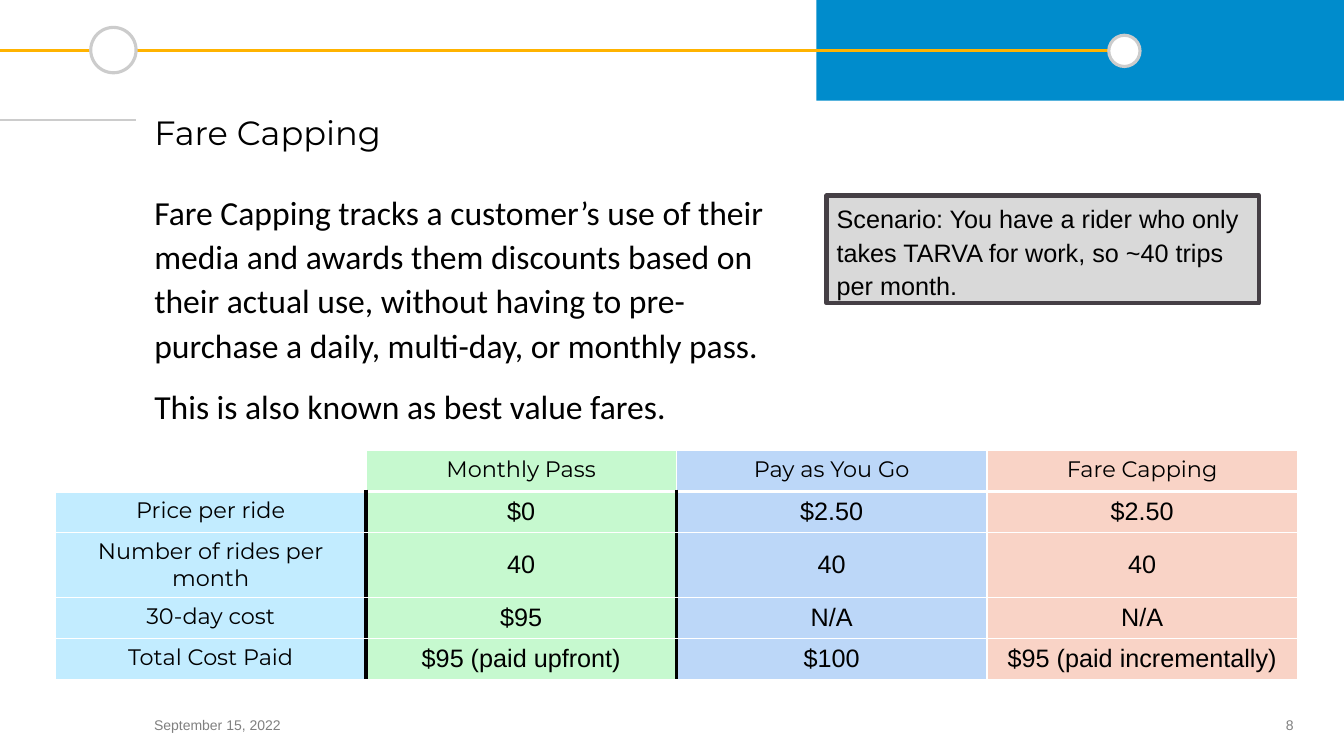
import dataclasses

import lxml.etree
import pptx
import pptx.dml.color
import pptx.enum.shapes
import pptx.enum.text
import pptx.oxml.ns
import pptx.util

Pt = pptx.util.Pt
qn = pptx.oxml.ns.qn
Align = pptx.enum.text.PP_ALIGN
Anchor = pptx.enum.text.MSO_ANCHOR
Kind = pptx.enum.shapes.MSO_SHAPE

HUES = {
    "white": "FFFFFF", "black": "000000", "blue": "008CCC", "gold": "FFB300",
    "silver": "CCCCCC", "gray": "808080", "pale": "D9D9D9", "dark": "453F45",
    "sky": "C2ECFF", "mint": "C6F9CF", "ice": "BCD7F8", "peach": "F9D3C6",
}


@dataclasses.dataclass
class Box:
    left: float
    top: float
    width: float
    height: float

    def spots(self) -> list:
        return [Pt(v) for v in (self.left, self.top, self.width, self.height)]


@dataclasses.dataclass
class Style:
    font: str
    size: float
    hue: str = "black"
    align: Align = Align.LEFT
    lead: float = 1.0
    gap: float = 0


@dataclasses.dataclass
class Rule:
    start: float
    end: float
    top: float
    hue: str
    width: float


@dataclasses.dataclass
class Form:
    kind: Kind
    box: Box
    fill: str
    line: str = ""


@dataclasses.dataclass
class Field:
    index: int
    box: Box
    style: Style
    texts: list
    anchor: Anchor = Anchor.TOP


@dataclasses.dataclass
class Note:
    box: Box
    text: str
    align: Align


RULES = [
    Rule(0, 792, 36, "gold", 2.25),
    Rule(0, 97.2, 85.7, "silver", 1.5),
]
PANEL = Form(Kind.RECTANGLE, Box(583.2, 0, 376.8, 72), "blue")
DOTS = [
    Form(Kind.OVAL, Box(792, 25.2, 22.3, 22.3), "white", "silver"),
    Form(Kind.OVAL, Box(64.8, 19.6, 32.4, 32.4), "white", "silver"),
]
FIELDS = [
    Field(0, Box(103, 72, 711.4, 48.2), Style("Montserrat", 24, lead=0.9),
          ["Fare Capping"], Anchor.MIDDLE),
    Field(1, Box(103, 130.3, 452.2, 339.8), Style("Calibri", 24, lead=1.1, gap=12),
          ["Fare Capping tracks a customer’s use of their media and awards them "
           "discounts based on their actual use, without having to pre-purchase "
           "a daily, multi-day, or monthly pass.",
           "This is also known as best value fares."]),
    Field(2, Box(590.4, 139.7, 308.9, 77), Style("Arial", 18, lead=1.1),
          ["Scenario: You have a rider who only takes TARVA for work, "
           "so ~40 trips per month."]),
]
NOTES = [
    Note(Box(103, 503.3, 131, 28.8), "September 15, 2022", Align.LEFT),
    Note(Box(905, 503.3, 32.4, 28.8), "8", Align.CENTER),
]
SMALL = Style("Arial", 10, "gray")
LABEL = Style("Montserrat", 16, align=Align.CENTER)
VALUE = Style("Arial", 18, align=Align.CENTER)
FARES = [
    ["", "Monthly Pass", "Pay as You Go", "Fare Capping"],
    ["Price per ride", "$0", "$2.50", "$2.50"],
    ["Number of rides per month", "40", "40", "40"],
    ["30-day cost", "$95", "N/A", "N/A"],
    ["Total Cost Paid", "$95 (paid upfront)", "$100", "$95 (paid incrementally)"],
]
TINTS = ["sky", "mint", "ice", "peach"]
ROWS = [29.3, 29.3, 46.5, 29.3, 29.3]
GRID = Box(39.6, 321.8, 887.2, sum(ROWS))
EDGES = {1: 3, 2: 2.25}


def color(hue: str) -> pptx.dml.color.RGBColor:
    return pptx.dml.color.RGBColor.from_string(HUES[hue])


def write(frame, texts: list, style: Style, plain: bool = False) -> None:
    for i, text in enumerate(texts):
        para = frame.paragraphs[0] if i == 0 else frame.add_paragraph()
        para.text = text
        para.alignment = style.align
        para.line_spacing = style.lead
        para.space_before = Pt(style.gap if i else 0)
        if plain:
            props = para._p.get_or_add_pPr()
            props.set("marL", "0")
            props.set("indent", "0")
            lxml.etree.SubElement(props, qn("a:buNone"))
        para.font.name = style.font
        para.font.size = Pt(style.size)
        para.font.bold = False
        para.font.color.rgb = color(style.hue)


def paint(shape, fill: str, line: str, width: float) -> None:
    shape.fill.solid()
    shape.fill.fore_color.rgb = color(fill)
    if line:
        shape.line.color.rgb = color(line)
        shape.line.width = Pt(width)
    else:
        shape.line.fill.background()


def draw_form(slide, form: Form) -> None:
    shape = slide.shapes.add_shape(form.kind, *form.box.spots())
    shape.shadow.inherit = False
    paint(shape, form.fill, form.line, 2.25)


def draw_rule(slide, rule: Rule) -> None:
    line = slide.shapes.add_connector(
        pptx.enum.shapes.MSO_CONNECTOR.STRAIGHT,
        Pt(rule.start), Pt(rule.top), Pt(rule.end), Pt(rule.top))
    line.line.color.rgb = color(rule.hue)
    line.line.width = Pt(rule.width)
    lxml.etree.SubElement(line._element.spPr, qn("a:effectLst"))


def fill_field(slide, field: Field) -> None:
    shape = slide.placeholders[field.index]
    shape.left, shape.top, shape.width, shape.height = field.box.spots()
    frame = shape.text_frame
    frame.word_wrap = True
    frame.auto_size = pptx.enum.text.MSO_AUTO_SIZE.NONE
    frame.vertical_anchor = field.anchor
    write(frame, field.texts, field.style, plain=True)


def draw_note(slide, note: Note) -> None:
    frame = slide.shapes.add_textbox(*note.box.spots()).text_frame
    frame.word_wrap = True
    frame.vertical_anchor = Anchor.MIDDLE
    write(frame, [note.text], dataclasses.replace(SMALL, align=note.align))


def edge(cell, side: str, hue: str, width: float) -> None:
    props = cell._tc.get_or_add_tcPr()
    line = lxml.etree.SubElement(props, qn("a:ln" + side), w=str(int(Pt(width))))
    solid = lxml.etree.SubElement(line, qn("a:solidFill"))
    lxml.etree.SubElement(solid, qn("a:srgbClr"), val=HUES[hue])


def fill_cell(cell, row: int, col: int) -> None:
    for side, place in (("L", col), ("R", col + 1)):
        dark = row > 0 and place in EDGES
        edge(cell, side, "black" if dark else "white", EDGES[place] if dark else 1)
    edge(cell, "T", "white", 3 if row == 1 else 1)
    edge(cell, "B", "white", 3 if row == 0 else 1)
    if row == col == 0:
        cell.fill.background()
    else:
        cell.fill.solid()
        cell.fill.fore_color.rgb = color(TINTS[col])
    value = row > 0 and col > 0
    cell.vertical_anchor = Anchor.MIDDLE if value else Anchor.TOP
    write(cell.text_frame, [FARES[row][col]], VALUE if value else LABEL)


def draw_grid(slide) -> None:
    table = slide.shapes.add_table(len(FARES), len(TINTS), *GRID.spots()).table
    table.first_row = False
    table.horz_banding = False
    for col in table.columns:
        col.width = Pt(GRID.width / len(TINTS))
    for row, height in zip(table.rows, ROWS):
        row.height = Pt(height)
    for row in range(len(FARES)):
        for col in range(len(TINTS)):
            fill_cell(table.cell(row, col), row, col)


def main() -> None:
    deck = pptx.Presentation()
    deck.slide_width, deck.slide_height = Pt(960), Pt(540)
    slide = deck.slides.add_slide(deck.slide_layouts[3])
    draw_form(slide, PANEL)
    for rule in RULES:
        draw_rule(slide, rule)
    for dot in DOTS:
        draw_form(slide, dot)
    for field in FIELDS:
        fill_field(slide, field)
    paint(slide.placeholders[2], "pale", "dark", 3)
    for note in NOTES:
        draw_note(slide, note)
    draw_grid(slide)
    deck.save("out.pptx")


if __name__ == "__main__":
    main()
